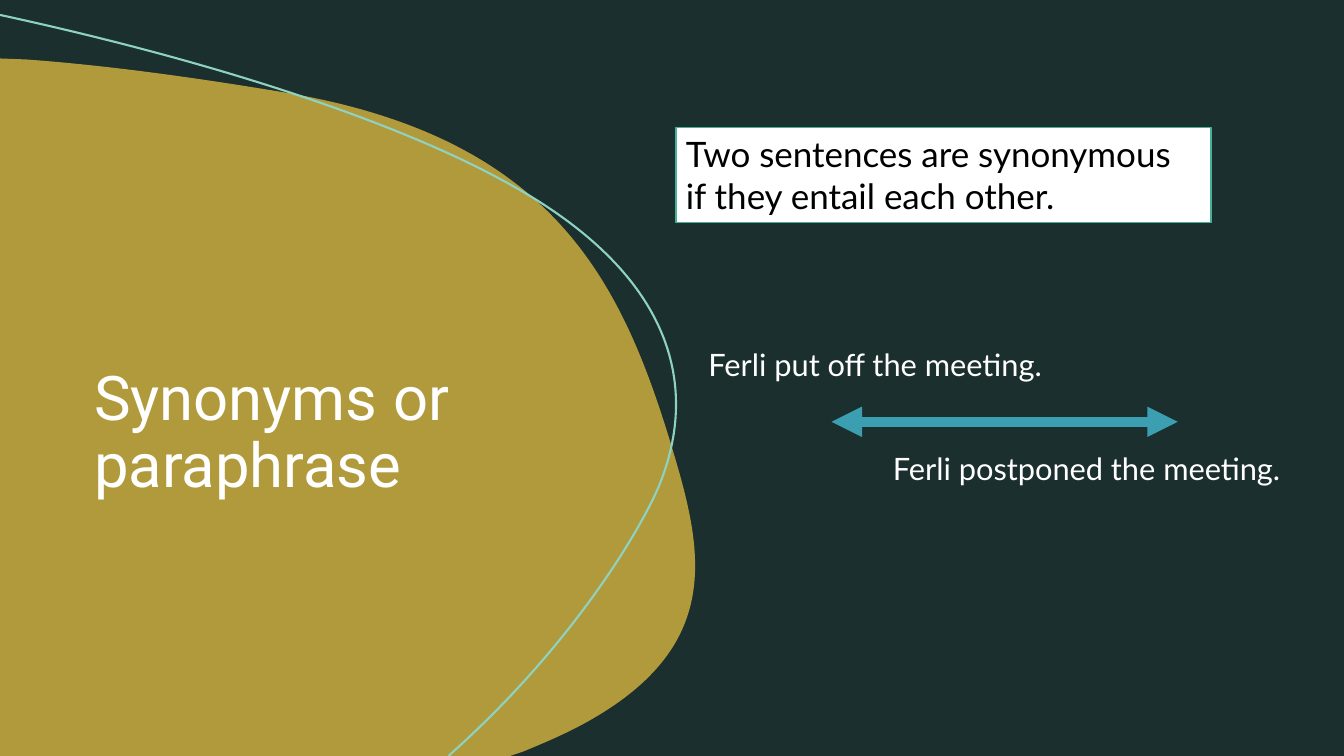
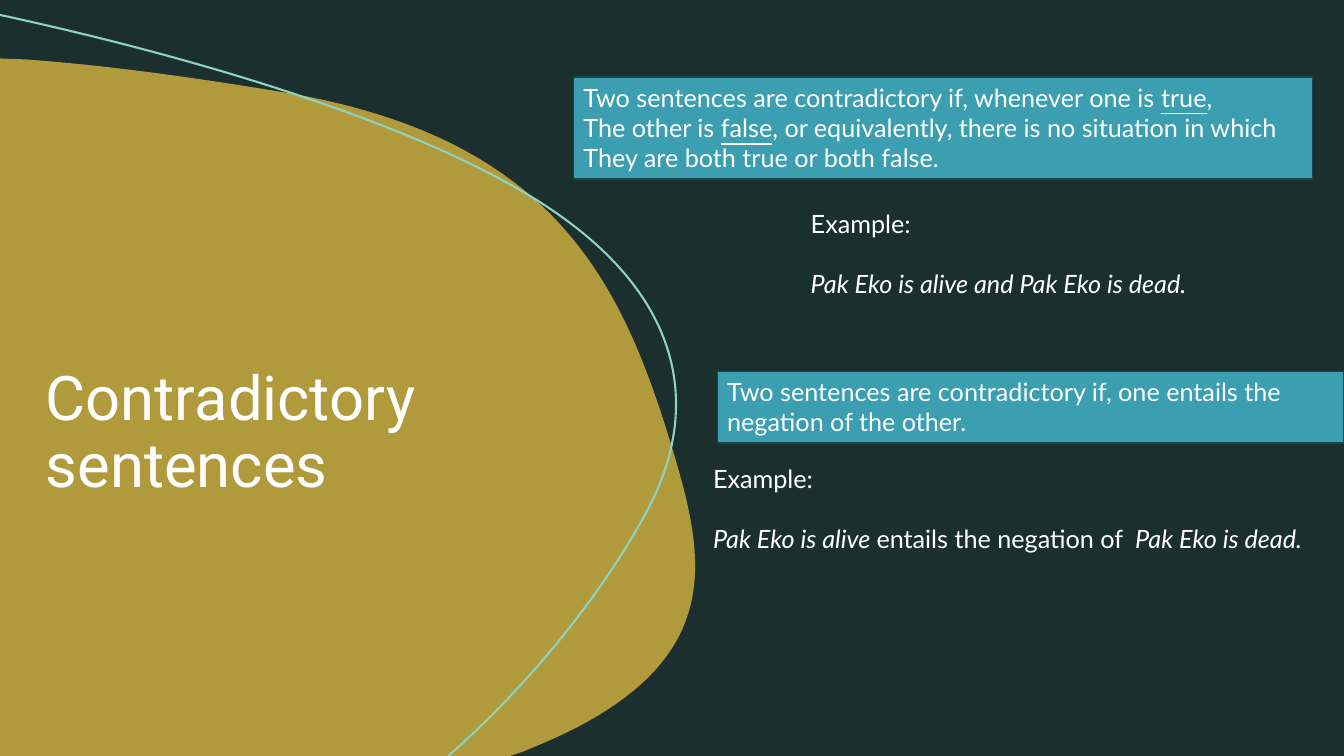
import dataclasses

import lxml.etree
import pptx
import pptx.dml.color
import pptx.enum.shapes
import pptx.enum.text
import pptx.oxml.ns
import pptx.util


@dataclasses.dataclass(frozen=True)
class Theme:
    """Colours, fonts and type sizes shared by the slides."""

    background: str = "1B2F2E"
    gold: str = "B19A3B"
    teal: str = "3B9EB1"
    teal_edge: str = "1A454E"
    mint: str = "8ED2C1"
    green: str = "46B196"
    white: str = "FFFFFF"
    black: str = "000000"
    title_font: str = "Roboto"
    body_font: str = "Lato"
    title_size: float = 44
    definition_size: float = 25
    sentence_size: float = 22
    body_size: float = 18
    body_gap: float = 21.4


THEME = Theme()
CELL = pptx.util.Inches(0.1)
COLUMNS, ROWS = 133.33, 75

BLOB_BOX = (0, 5.8, 69, 69.2)
BLOB_STEPS = [
    ("moveTo", (0, 5.8)),
    ("lnTo", (2.6, 5.9)),
    ("cubicBezTo", (10.8, 6.5), (19.3, 7.7), (27.8, 9.1)),
    ("cubicBezTo", (54.2, 13.4), (61.3, 27.1), (66.3, 43.2)),
    ("cubicBezTo", (69.6, 54), (72.4, 63.8), (58.1, 71.7)),
    ("cubicBezTo", (56.1, 72.8), (54, 73.7), (51.8, 74.6)),
    ("lnTo", (50.6, ROWS)),
    ("lnTo", (0, ROWS)),
    ("lnTo", (0, 5.8)),
    ("close",),
]
ARC_BOX = (0, 1.5, 67, 73.5)
ARC_STEPS = [
    ("moveTo", (0, 1.5)),
    ("lnTo", (0.1, 1.5)),
    ("cubicBezTo", (20.8, 6), (38.6, 11.8), (49.7, 17.8)),
    ("cubicBezTo", (66.4, 26.7), (69.7, 37.9), (65.3, 48.4)),
    ("cubicBezTo", (63.2, 53.2), (56.4, 64.4), (44.6, 74.9)),
    ("lnTo", (44.5, ROWS)),
]


def grid(*cells):
    """Convert grid cells to lengths."""
    return [round(cell * CELL) for cell in cells]


def color(code):
    """Return the colour for a hex code."""
    return pptx.dml.color.RGBColor.from_string(code)


def apply_format(target, values):
    """Set each named attribute on the target."""
    for name, value in values.items():
        setattr(target, name, value)


def add_element(parent, tag, **attributes):
    """Append a drawing element to its parent."""
    return lxml.etree.SubElement(
        parent, pptx.oxml.ns.qn(f"a:{tag}"), **attributes)


def paint(shape, fill=None, line=None, width=1):
    """Give a shape its fill and line, without a shadow."""
    shape.shadow.inherit = False
    for part, code in ((shape.fill, fill), (shape.line.fill, line)):
        if code:
            part.solid()
            part.fore_color.rgb = color(code)
        else:
            part.background()
    if line:
        shape.line.width = pptx.util.Pt(width)


def add_outline(slide, box, steps, **style):
    """Draw an outline of lines and Bezier curves within a box."""
    left, top, width, height = box
    builder = slide.shapes.build_freeform(*grid(left, top))
    builder.add_line_segments([grid(left + width, top + height)], close=False)
    shape = builder.convert_to_shape()
    outline = shape._element.find(".//" + pptx.oxml.ns.qn("a:path"))
    for child in list(outline):
        outline.remove(child)
    for tag, *points in steps:
        step = add_element(outline, tag)
        for column, row in points:
            x, y = grid(column - left, row - top)
            add_element(step, "pt", x=str(x), y=str(y))
    paint(shape, **style)


def write_text(shape, paragraphs, size, code=THEME.white, font=THEME.body_font,
               wrap=False, frame_format=None, paragraph_format=None, gap=0):
    """Write paragraphs made of (text, font format) runs."""
    frame = shape.text_frame
    apply_format(frame, {
        "word_wrap": wrap,
        "auto_size": pptx.enum.text.MSO_AUTO_SIZE.SHAPE_TO_FIT_TEXT,
        "vertical_anchor": pptx.enum.text.MSO_ANCHOR.TOP,
        **(frame_format or {}),
    })
    for index, runs in enumerate(paragraphs):
        paragraph = frame.add_paragraph() if index else frame.paragraphs[0]
        apply_format(paragraph, {
            "alignment": pptx.enum.text.PP_ALIGN.LEFT,
            "space_before": pptx.util.Pt(gap if index else 0),
            **(paragraph_format or {}),
        })
        for text, run_format in runs:
            run = paragraph.add_run()
            run.text = text
            run.font.color.rgb = color(code)
            apply_format(run.font, {
                "name": font, "size": pptx.util.Pt(size), **run_format,
            })


def add_text(slide, place, paragraphs, size, **options):
    """Add plain text on the grid."""
    write_text(slide.shapes.add_textbox(*grid(*place)), paragraphs, size, **options)


def add_definition(slide, place, paragraphs, size, fill=THEME.teal,
                   line=THEME.teal_edge, **options):
    """Add a filled box that holds a definition."""
    box = slide.shapes.add_shape(
        pptx.enum.shapes.MSO_SHAPE.RECTANGLE, *grid(*place))
    paint(box, fill, line)
    write_text(box, paragraphs, size, **options)


def add_double_arrow(slide, start, end, code, width):
    """Add a straight line with an arrowhead at each end."""
    arrow = slide.shapes.add_connector(
        pptx.enum.shapes.MSO_CONNECTOR.STRAIGHT, *grid(*start, *end))
    arrow.line.color.rgb = color(code)
    arrow.line.width = pptx.util.Pt(width)
    properties = arrow._element.spPr
    line = properties.find(pptx.oxml.ns.qn("a:ln"))
    for tag in ("headEnd", "tailEnd"):
        add_element(line, tag, type="triangle")
    add_element(properties, "effectLst")


def add_topic_slide(presentation, title, title_column):
    """Add a slide with the shared background, curves and title."""
    slide = presentation.slides.add_slide(presentation.slide_layouts[6])
    slide.background.fill.solid()
    slide.background.fill.fore_color.rgb = color(THEME.background)
    add_outline(slide, BLOB_BOX, BLOB_STEPS, fill=THEME.gold)
    add_outline(slide, ARC_BOX, ARC_STEPS, line=THEME.mint, width=1.5)
    add_text(
        slide, (title_column, 25.15, 50, 25), [[(title, {})]],
        THEME.title_size, font=THEME.title_font, wrap=True,
        frame_format={
            "auto_size": pptx.enum.text.MSO_AUTO_SIZE.NONE,
            "vertical_anchor": pptx.enum.text.MSO_ANCHOR.BOTTOM,
        },
        paragraph_format={"line_spacing": 0.9},
    )
    return slide


def add_synonyms(presentation):
    """Build the slide on synonymous sentences."""
    slide = add_topic_slide(presentation, "Synonyms or paraphrase", 8.35)
    add_definition(
        slide, (67.05, 12.65, 53.1, 9.4),
        [[("Two sentences are synonymous", {})],
         [("if they entail each other.", {})]],
        THEME.definition_size, fill=THEME.white, line=THEME.green,
        code=THEME.black)
    for place, sentence in (
        ((69.3, 33.8, 36.7, 4.7), "Ferli put off the meeting."),
        ((87.6, 44.15, 43, 4.7), "Ferli postponed the meeting."),
    ):
        add_text(slide, place, [[(sentence, {})]], THEME.sentence_size)
    add_double_arrow(slide, (82.5, 41.85), (116.85, 41.85), THEME.teal, 7.25)


def add_contradictions(presentation):
    """Build the slide on contradictory sentences."""
    slide = add_topic_slide(presentation, "Contradictory sentences", 3.55)
    underlined, italic = {"underline": True}, {"italic": True}
    example = [("Example:", {})]
    add_definition(
        slide, (56.9, 7.65, 73.3, 10.1),
        [[("Two sentences are contradictory if, whenever one is ", {}),
          ("true", underlined), (",", {})],
         [("The other is ", {}), ("false", underlined),
          (", or equivalently, there is no situation in which", {})],
         [("They are both true or both false.", {})]],
        THEME.body_size)
    add_text(
        slide, (79.45, 20.15, 43.4, 10.1),
        [example, [("Pak Eko is alive and Pak Eko is dead.", italic)]],
        THEME.body_size, gap=THEME.body_gap)
    add_definition(
        slide, (71.15, 36.85, 62.2, 7.1),
        [[("Two sentences are contradictory if, one entails the "
           "negation of the other.", {})]],
        THEME.body_size, wrap=True)
    add_text(
        slide, (69.75, 45.45, 64.5, 10.1),
        [example,
         [("Pak Eko is alive ", italic), ("entails the negation of", {}),
          ("  Pak Eko is dead.", italic)]],
        THEME.body_size, gap=THEME.body_gap)


def main():
    """Build and save the presentation."""
    presentation = pptx.Presentation()
    width, height = grid(COLUMNS, ROWS)
    apply_format(presentation, {"slide_width": width, "slide_height": height})
    add_synonyms(presentation)
    add_contradictions(presentation)
    presentation.save("out.pptx")


if __name__ == "__main__":
    main()
